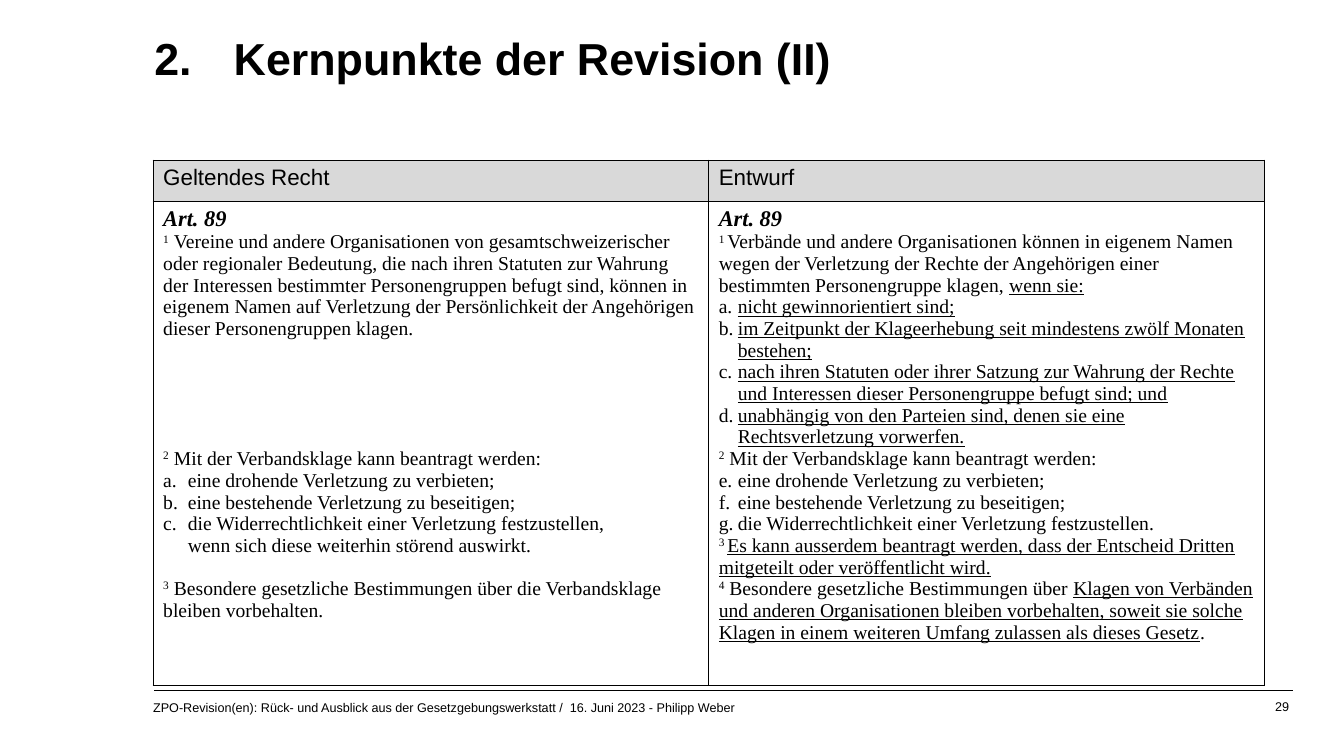
from lxml import etree
from pptx import Presentation
from pptx.dml.color import RGBColor
from pptx.enum.shapes import MSO_CONNECTOR
from pptx.enum.text import PP_ALIGN
from pptx.oxml.ns import qn
from pptx.util import Cm, Pt

BLACK = RGBColor(0x00, 0x00, 0x00)
WHITE = RGBColor(0xFF, 0xFF, 0xFF)
GREY = RGBColor(0xD9, 0xD9, 0xD9)
SANS, SERIF = "Arial", "Times New Roman"
STRAIGHT, LEFT, RIGHT = MSO_CONNECTOR.STRAIGHT, PP_ALIGN.LEFT, PP_ALIGN.RIGHT
LINE = 15.5  # height of one line of law text, in points

# Each paragraph: kind, spans (a leading "_" underlines, "^" raises), lines of space before
CURRENT_LAW = [
    ("heading", ["Art. 89"], 0),
    ("text", ["^1", "\u00a0Vereine und andere Organisationen von gesamtschweizerischer oder "
              "regionaler Bedeutung, die nach ihren Statuten zur Wahrung der Interessen "
              "bestimmter Personengruppen befugt sind, können in eigenem Namen auf Verletzung "
              "der Persönlichkeit der Angehörigen dieser Personengruppen klagen."], 0),
    ("text", ["^2", "\u00a0Mit der Verbandsklage kann beantragt werden:"], 5),
    ("item", ["eine drohende Verletzung zu verbieten;"], 0),
    ("item", ["eine bestehende Verletzung zu beseitigen;"], 0),
    ("item", ["die Widerrechtlichkeit einer Verletzung festzustellen,", "\n",
              "wenn sich diese weiterhin störend auswirkt."], 0),
    ("text", ["^3", "\u00a0Besondere gesetzliche Bestimmungen über die Verbandsklage "
              "bleiben vorbehalten."], 1),
]
DRAFT = [
    ("heading", ["Art. 89"], 0),
    ("text", ["^1 ", "Verbände und andere Organisationen können in eigenem Namen wegen der "
              "Verletzung der Rechte der Angehörigen einer bestimmten Personengruppe klagen, ",
              "_wenn sie:"], 0),
    ("item", ["_nicht gewinnorientiert sind;"], 0),
    ("item", ["_im Zeitpunkt der Klageerhebung seit mindestens zwölf Monaten bestehen;"], 0),
    ("item", ["_nach ihren Statuten oder ihrer Satzung zur Wahrung der Rechte und Interessen "
              "dieser Personengruppe befugt sind; und"], 0),
    ("item", ["_unabhängig von den Parteien sind, denen sie eine Rechtsverletzung "
              "vorwerfen."], 0),
    ("text", ["^2", " Mit der Verbandsklage kann beantragt werden:"], 0),
    ("item", ["eine drohende Verletzung zu verbieten;"], 0),
    ("item", ["eine bestehende Verletzung zu beseitigen;"], 0),
    ("item", ["die Widerrechtlichkeit einer Verletzung festzustellen."], 0),
    ("text", ["^3 ", "_Es kann ausserdem beantragt werden, dass der Entscheid Dritten "
              "mitgeteilt oder veröffentlicht wird."], 0),
    ("text", ["^4", " Besondere gesetzliche Bestimmungen über ",
              "_Klagen von Verbänden und anderen Organisationen bleiben vorbehalten, soweit "
              "sie solche Klagen in einem weiteren Umfang zulassen als dieses Gesetz", "."], 0),
]


def add_span(para, text, size=14, font=SERIF, bold=False, italic=False,
             underline=False, raised=False):
    span = para.add_run()
    span.text = text
    span.font.size, span.font.name = Pt(size), font
    span.font.bold, span.font.italic, span.font.underline = bold, italic, underline
    span.font.color.rgb = BLACK
    if raised:
        span.font._element.set("baseline", "30000")


def add_text_box(page, left, top, width, height, text, size, bold=False, align=LEFT):
    box = page.shapes.add_textbox(Cm(left), Cm(top), Cm(width), Cm(height))
    frame = box.text_frame
    frame.word_wrap = True
    frame.margin_left = frame.margin_right = frame.margin_top = frame.margin_bottom = 0
    para = frame.paragraphs[0]
    para.alignment = align
    add_span(para, text, size=size, font=SANS, bold=bold)
    return para


def set_tab(para, position):
    tabs = etree.SubElement(para._p.get_or_add_pPr(), qn("a:tabLst"))
    etree.SubElement(tabs, qn("a:tab"), pos=str(Cm(position)), algn="l")


def set_lettered(para, indent):
    properties = para._p.get_or_add_pPr()
    properties.set("marL", str(Cm(indent)))
    properties.set("indent", str(-Cm(indent)))
    etree.SubElement(properties, qn("a:buAutoNum"), type="alphaLcPeriod")


def set_cell(cell, color):
    cell.fill.solid()
    cell.fill.fore_color.rgb = color
    properties = cell._tc.get_or_add_tcPr()
    for place, side in enumerate(("a:lnL", "a:lnR", "a:lnT", "a:lnB")):
        border = etree.Element(qn(side), w=str(Pt(1)))
        fill = etree.SubElement(border, qn("a:solidFill"))
        etree.SubElement(fill, qn("a:srgbClr"), val=str(BLACK))
        properties.insert(place, border)


def fill_law_cell(cell, paragraphs, indent):
    frame = cell.text_frame
    for number, (kind, spans, gap) in enumerate(paragraphs):
        para = frame.add_paragraph() if number else frame.paragraphs[0]
        if gap:
            para.space_before = Pt(gap * LINE)
        if kind == "item":
            set_lettered(para, indent)
        heading = kind == "heading"
        for text in spans:
            if text == "\n":
                para.add_line_break()
            else:
                add_span(para, text.lstrip("_^"), size=16 if heading else 14,
                         bold=heading, italic=heading,
                         underline=text.startswith("_"), raised=text.startswith("^"))


def add_law_table(page):
    table = page.shapes.add_table(2, 2, Cm(3.86), Cm(4.04), Cm(28), Cm(13)).table
    for column in table.columns:
        column.width = Cm(14)
    table.rows[0].height, table.rows[1].height = Cm(1.04), Cm(11.96)
    columns = (("Geltendes Recht", CURRENT_LAW, 0.62), ("Entwurf", DRAFT, 0.48))
    for number, (title, paragraphs, indent) in enumerate(columns):
        header, body = table.cell(0, number), table.cell(1, number)
        set_cell(header, GREY)
        set_cell(body, WHITE)
        add_span(header.text_frame.paragraphs[0], title, size=16, font=SANS)
        fill_law_cell(body, paragraphs, indent)


def add_rule(page, left, right, top):
    rule = page.shapes.add_connector(STRAIGHT, Cm(left), Cm(top), Cm(right), Cm(top))
    rule.line.color.rgb = BLACK
    rule.line.width = Pt(0.75)
    etree.SubElement(rule._element.spPr, qn("a:effectLst"))


def main():
    deck = Presentation()
    deck.slide_width, deck.slide_height = Cm(33.87), Cm(19.05)
    page = deck.slides.add_slide(deck.slide_layouts[6])

    # Title
    title = add_text_box(page, 3.89, 0.86, 28.65, 2.49,
                         "2. \tKernpunkte der Revision (II)", 32, bold=True)
    title.line_spacing = Pt(36)
    set_tab(title, 2)

    # Comparison of current law and draft
    add_law_table(page)

    # Footer
    add_rule(page, 3.89, 32.59, 17.4)
    add_text_box(page, 3.86, 17.63, 24.82, 0.48,
                 "ZPO-Revision(en): Rück- und Ausblick aus der Gesetzgebungswerkstatt /  "
                 "16. Juni 2023 - Philipp Weber", 9)
    add_text_box(page, 30.84, 17.6, 1.65, 0.51, "29", 9, align=RIGHT)

    deck.save("out.pptx")


if __name__ == "__main__":
    main()
